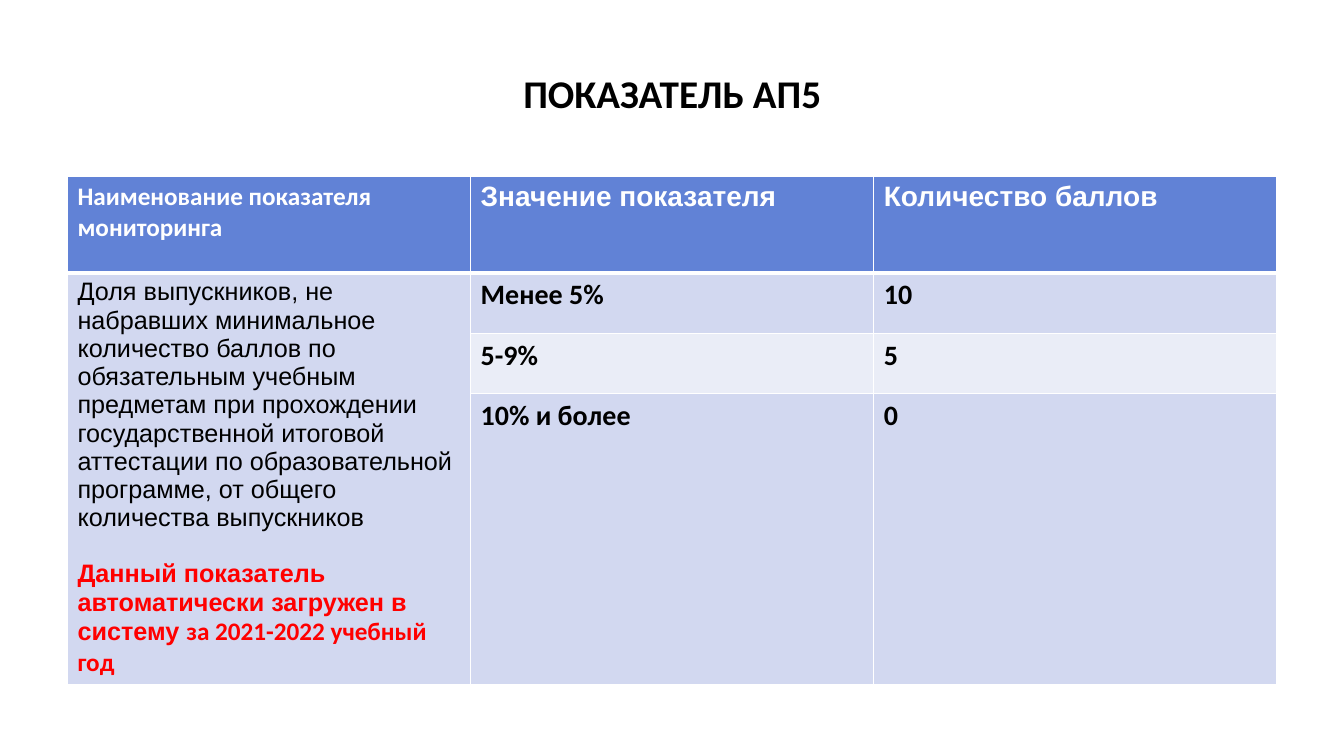
"""Build the slide with the scoring table for indicator АП5."""
from lxml.etree import SubElement
from pptx import Presentation
from pptx.dml.color import RGBColor
from pptx.enum.text import MSO_ANCHOR, PP_ALIGN
from pptx.oxml.ns import qn
from pptx.util import Cm, Pt


def rgb(value):
    return RGBColor.from_string(value)


def style(font, name, size, color, bold=True):
    font.name, font.size, font.bold = name, Pt(size), bold
    font.color.rgb = rgb(color)


prs = Presentation()
prs.slide_width, prs.slide_height = Cm(33.87), Cm(19.05)
s = prs.slides.add_slide(prs.slide_layouts[5])

title = s.shapes.title
title.left, title.top, title.width, title.height = Cm(1.7), Cm(0.76), Cm(30.48), Cm(3.18)
tf = title.text_frame
tf.text = "ПОКАЗАТЕЛЬ АП5"
tf.vertical_anchor = MSO_ANCHOR.MIDDLE
p = tf.paragraphs[0]
p.alignment = PP_ALIGN.CENTER
style(p.font, "Calibri", 28, "000000")

rows = [
    ("Наименование показателя мониторинга", "Значение показателя", "Количество баллов"),
    ("Доля выпускников, не набравших минимальное количество баллов по обязательным "
     "учебным предметам при прохождении государственной итоговой аттестации по "
     "образовательной программе, от общего количества выпускников", "Менее 5%", "10"),
    ("", "5-9%", "5"),
    ("", "10% и более", "0"),
]
fills = ["6182D6", "D2D8F0", "EAEDF7", "D2D8F0"]
heights = [2.43, 1.52, 1.52, 7.32]

table = s.shapes.add_table(4, 3, Cm(1.7), Cm(4.45), Cm(30.48), Cm(sum(heights))).table
for i, (texts, fill, height) in enumerate(zip(rows, fills, heights)):
    table.rows[i].height = Cm(height)
    for j, text in enumerate(texts):
        cell = table.cell(i, j)
        for side in "LRTB":
            thick = (i, side) in ((0, "B"), (1, "T"))
            ln = SubElement(cell._tc.get_or_add_tcPr(), qn(f"a:ln{side}"), w=str(Pt(3 if thick else 1)))
            SubElement(SubElement(ln, qn("a:solidFill")), qn("a:srgbClr"), val="FFFFFF")
        cell.fill.solid()
        cell.fill.fore_color.rgb = rgb(fill)
        if text:
            cell.text = text
            name = "Calibri" if (i == 0) == (j == 0) else "Arial"
            style(cell.text_frame.paragraphs[0].font, name, 18 if j == 0 else 20,
                  "000000" if i else "FFFFFF", bold=i == 0 or j > 0)

indicator = table.cell(1, 0)
indicator.merge(table.cell(3, 0))
p = indicator.text_frame.add_paragraph()
p.space_before = Pt(20)
for text, name in [("Данный показатель автоматически загружен в систему ", "Arial"),
                   ("за 2021-2022 учебный год", "Calibri")]:
    r = p.add_run()
    r.text = text
    style(r.font, name, 18, "FF0000")

prs.save("out.pptx")
